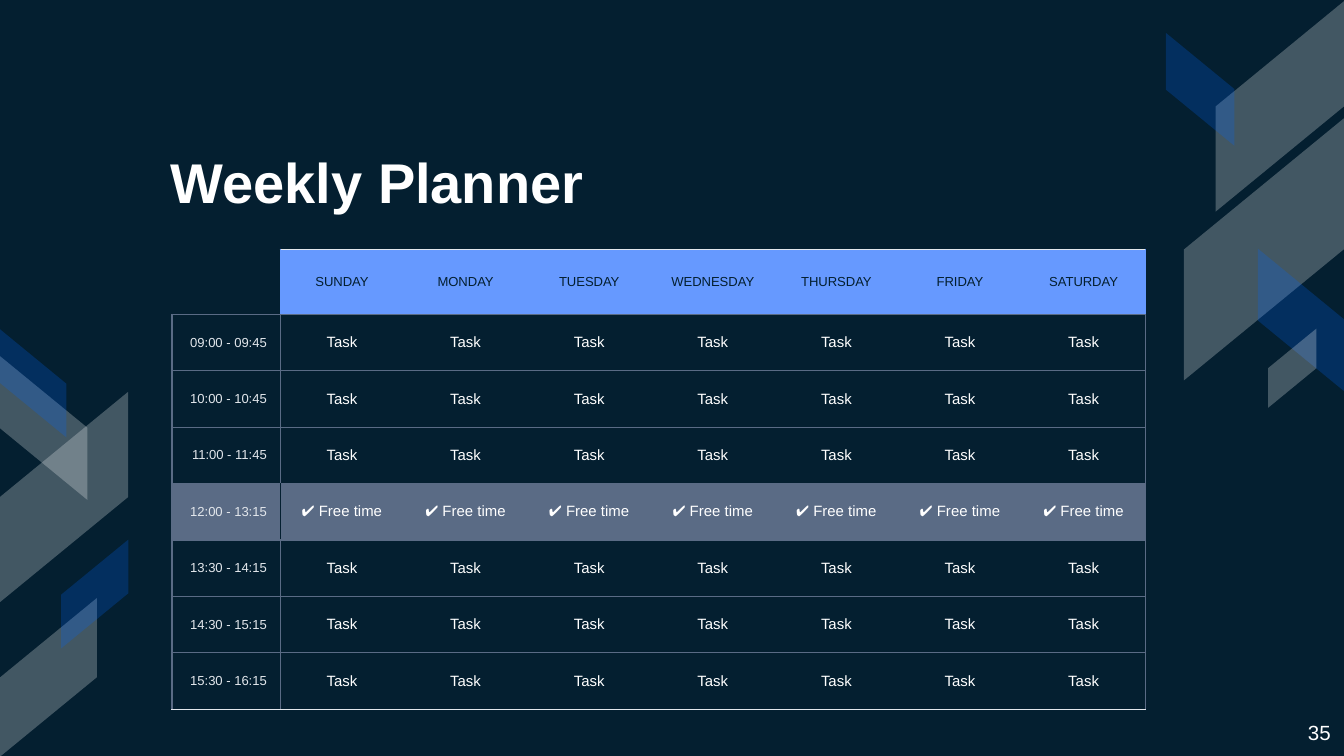
from lxml.etree import SubElement
from pptx import Presentation
from pptx.dml.color import RGBColor
from pptx.enum.shapes import MSO_SHAPE
from pptx.enum.text import MSO_ANCHOR as Anchor, MSO_AUTO_SIZE as AutoSize, PP_ALIGN as Align
from pptx.oxml.ns import qn
from pptx.util import Emu, Pt

PX = 4572  # EMU per px, 200 px to the inch
INSET = 20
FONT = "Arial"

NAVY = RGBColor(0x04, 0x1F, 0x30)
WHITE = RGBColor(0xFF, 0xFF, 0xFF)
BLUE = RGBColor(0x00, 0x66, 0xFF)
SKY = RGBColor(0x66, 0x99, 0xFF)
SLATE = RGBColor(0x5A, 0x6B, 0x85)
MIST = RGBColor(0xE3, 0xE7, 0xEC)

OPACITY = {WHITE: 25, BLUE: 23}  # percent

# left, top, width, height, rotation, mirrored, colour
RIBBONS = [
    (1748, 62, 314, 192, 90, True, WHITE),
    (1686, 252, 390, 238, 90, True, WHITE),
    (1830, 412, 212, 128, 270, False, BLUE),
    (1702, 82, 168, 102, 270, False, BLUE),
    (1864, 512, 118, 72, 270, True, WHITE),
    (-62, 644, 314, 192, 90, True, WHITE),
    (-42, 572, 214, 130, 90, False, WHITE),
    (-46, 936, 236, 144, 270, True, WHITE),
    (-32, 520, 162, 100, 270, False, BLUE),
    (60, 834, 162, 100, 270, True, BLUE),
]

DAYS = ["SUNDAY", "MONDAY", "TUESDAY", "WEDNESDAY", "THURSDAY", "FRIDAY", "SATURDAY"]
SLOTS = ["09:00 - 09:45", "10:00 - 10:45", "11:00 - 11:45", "12:00 - 13:15",
         "13:30 - 14:15", "14:30 - 15:15", "15:30 - 16:15"]
FREE_ROW = 4
ROWS, COLS = len(SLOTS) + 1, len(DAYS) + 1
TIME_W, DAY_W = 161, 184
HEADER_H, SLOT_H = 66, 84  # the header grows to hold its blank corner
CORNER_PT = 17


def px(*lengths):
    return [Emu(length * PX) for length in lengths]


def write(frame, text, size, color, align, bold=False):
    paragraph = frame.paragraphs[0]
    paragraph.alignment = align
    run = paragraph.add_run()
    run.text = text
    run.font.name = FONT
    run.font.size = Pt(size)
    run.font.bold = bold
    run.font.color.rgb = color


def set_insets(holder):
    (inset,) = px(INSET)
    holder.margin_left = holder.margin_right = inset
    holder.margin_top = holder.margin_bottom = inset


def add_ribbon(slide, left, top, width, height, rotation, mirrored, color):
    ribbon = slide.shapes.add_shape(MSO_SHAPE.PARALLELOGRAM, *px(left, top, width, height))
    ribbon.adjustments[0] = 0.82
    ribbon.rotation = rotation
    if mirrored:
        ribbon._element.spPr.find(qn("a:xfrm")).set("flipH", "1")
    ribbon.shadow.inherit = False
    ribbon.line.fill.background()
    ribbon.fill.solid()
    ribbon.fill.fore_color.rgb = color
    tint = ribbon._element.spPr.find(qn("a:solidFill")).find(qn("a:srgbClr"))
    SubElement(tint, qn("a:alpha")).set("val", str(OPACITY[color] * 1000))


def place_title(slide, text):
    title = slide.shapes.title
    title.left, title.top, title.width, title.height = px(234, 200, 1306, 139)
    frame = title.text_frame
    frame.word_wrap = True
    frame.auto_size = AutoSize.NONE
    frame.vertical_anchor = Anchor.BOTTOM
    set_insets(frame)
    write(frame, text, 30, WHITE, Align.LEFT, bold=True)


def add_page_number(slide, number):
    frame = slide.shapes.add_textbox(*px(1872, 1053, 128, 72)).text_frame
    frame.word_wrap = True
    set_insets(frame)
    write(frame, number, 11, WHITE, Align.RIGHT)


def vertical_rule(row, edge):
    """Colour of the line at a column edge, or None."""
    if edge not in (0, 1, COLS):
        return None
    if row == 0:
        return SKY if edge else None
    return NAVY if (row, edge) == (FREE_ROW, 1) else SLATE


def horizontal_rule(edge, col):
    """Colour of the line at a row edge, or None."""
    if edge == 0:
        return MIST if col else None
    return MIST if edge == ROWS else SLATE


def set_borders(cell, row, col):
    properties = cell._tc.get_or_add_tcPr()
    sides = {"a:lnL": vertical_rule(row, col), "a:lnR": vertical_rule(row, col + 1),
             "a:lnT": horizontal_rule(row, col), "a:lnB": horizontal_rule(row + 1, col)}
    for tag, color in sides.items():
        line = SubElement(properties, qn(tag), w=str(Pt(0.75)))
        if color is None:
            SubElement(line, qn("a:noFill"))
        else:
            SubElement(SubElement(line, qn("a:solidFill")), qn("a:srgbClr"), val=str(color))


def size_blank(cell):
    """Set the font that gives an empty cell its height."""
    paragraph = cell.text_frame.paragraphs[0]._p
    mark = SubElement(paragraph, qn("a:endParaRPr"), sz=str(CORNER_PT * 100))
    SubElement(mark, qn("a:latin"), typeface=FONT)


def cell_content(row, col):
    """Text, size, colour and alignment of a planner cell."""
    if row == 0:
        return DAYS[col - 1], 7, NAVY, Align.CENTER
    if col == 0:
        return SLOTS[row - 1], 7, MIST, Align.RIGHT
    return "✔ Free time" if row == FREE_ROW else "Task", 8, WHITE, Align.CENTER


def fill_cell(cell, row, col):
    set_insets(cell)
    cell.vertical_anchor = Anchor.MIDDLE
    set_borders(cell, row, col)
    corner = row == col == 0
    if row in (0, FREE_ROW) and not corner:
        cell.fill.solid()
        cell.fill.fore_color.rgb = SLATE if row else SKY
    else:
        cell.fill.background()
    if corner:
        size_blank(cell)
    else:
        write(cell.text_frame, *cell_content(row, col))


def add_planner(slide):
    width = TIME_W + DAY_W * len(DAYS)
    height = HEADER_H + SLOT_H * len(SLOTS)
    planner = slide.shapes.add_table(ROWS, COLS, *px(256, 371, width, height)).table
    planner.first_row = planner.horz_banding = False
    for col, column in enumerate(planner.columns):
        (column.width,) = px(DAY_W if col else TIME_W)
    for row, line in enumerate(planner.rows):
        (line.height,) = px(SLOT_H if row else HEADER_H)
        for col, cell in enumerate(line.cells):
            fill_cell(cell, row, col)


def main():
    deck = Presentation()
    deck.slide_width, deck.slide_height = px(2000, 1125)
    slide = deck.slides.add_slide(deck.slide_layouts[5])

    # Background and corner ribbons
    slide.background.fill.solid()
    slide.background.fill.fore_color.rgb = NAVY
    for ribbon in RIBBONS:
        add_ribbon(slide, *ribbon)

    # Title, page number and timetable
    place_title(slide, "Weekly Planner")
    add_page_number(slide, "35")
    add_planner(slide)

    deck.save("out.pptx")


if __name__ == "__main__":
    main()
